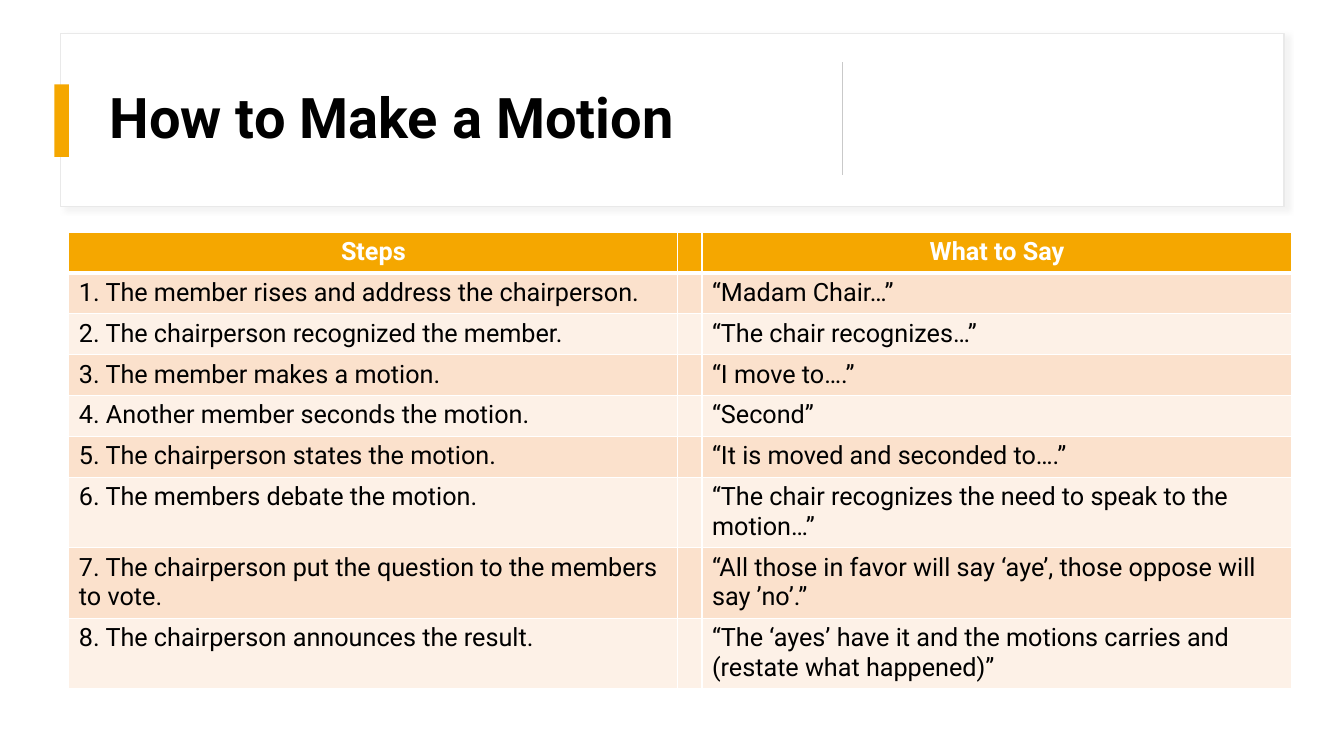
from lxml import etree
from pptx import Presentation
from pptx.dml.color import RGBColor
from pptx.enum.shapes import MSO_CONNECTOR, MSO_SHAPE
from pptx.enum.text import MSO_ANCHOR, PP_ALIGN
from pptx.oxml.ns import qn
from pptx.util import Pt

RECTANGLE = MSO_SHAPE.RECTANGLE
STRAIGHT = MSO_CONNECTOR.STRAIGHT
MIDDLE = MSO_ANCHOR.MIDDLE
CENTER, LEFT = PP_ALIGN.CENTER, PP_ALIGN.LEFT

# Content
TITLE = "How to Make a Motion"
HEADINGS = ("Steps", "What to Say")
STEPS = [
    ("1. The member rises and address the chairperson.", "“Madam Chair…”"),
    ("2. The chairperson recognized the member.", "“The chair recognizes…”"),
    ("3. The member makes a motion.", "“I move to….”"),
    ("4. Another member seconds the motion.", "“Second”"),
    ("5. The chairperson states the motion.", "“It is moved and seconded to….”"),
    ("6. The members debate the motion.",
     "“The chair recognizes the need to speak to the motion…”"),
    ("7. The chairperson put the question to the members to vote.",
     "“All those in favor will say ‘aye’, those oppose will say ’no’.”"),
    ("8. The chairperson announces the result.",
     "“The ‘ayes’ have it and the motions carries and (restate what happened)”"),
]

# Style and measures, in points
FONT = "Roboto"
ACCENT, WHITE, BLACK = "F5A700", "FFFFFF", "000000"
BANDS = ("FBE1CC", "FDF1E7")
FRAME_LINE, DIVIDER, SHADOW = "E9E9E9", "C9C9C9", "D9D9D9"
COLUMNS = (435, 17.2, 421.5)
ONE_LINE, TWO_LINES, FIRST_TWO_LINE_STEP = 29.2, 49.4, 6
TABLE_LEFT, TABLE_TOP = 49.2, 165.7


def color(value):
    return RGBColor.from_string(value)


def set_font(para, size, value, bold):
    para.font.name = FONT
    para.font.size = Pt(size)
    para.font.bold = bold
    para.font.color.rgb = color(value)


def add_rectangle(left, top, width, height, fill):
    shape = page.shapes.add_shape(RECTANGLE, Pt(left), Pt(top), Pt(width), Pt(height))
    shape.shadow.inherit = False
    shape.fill.solid()
    shape.fill.fore_color.rgb = color(fill)
    shape.line.fill.background()
    return shape


def add_color(parent, value):
    return etree.SubElement(parent, qn("a:srgbClr"), val=value)


def add_border(cell, side, width):
    line = etree.SubElement(cell._tc.get_or_add_tcPr(), qn(f"a:{side}"), w=str(Pt(width)))
    add_color(etree.SubElement(line, qn("a:solidFill")), WHITE)


def fill_cell(cell, text, fill, is_header):
    for side in ("lnL", "lnR", "lnT", "lnB"):
        add_border(cell, side, 3 if is_header and side == "lnB" else 1)
    cell.fill.solid()
    cell.fill.fore_color.rgb = color(fill)
    para = cell.text_frame.paragraphs[0]
    if text:
        para.text = text
    para.alignment = CENTER if is_header else LEFT
    set_font(para, 18, WHITE if is_header else BLACK, is_header)


deck = Presentation()
deck.slide_width, deck.slide_height = Pt(960), Pt(540)
page = deck.slides.add_slide(deck.slide_layouts[6])

# Title frame with a soft shadow
frame = add_rectangle(43.2, 23.8, 874, 123.8, WHITE)
frame.line.color.rgb = color(FRAME_LINE)
frame.line.width = Pt(1)
effects = frame._element.spPr.find(qn("a:effectLst"))
shadow = etree.SubElement(effects, qn("a:outerShdw"), blurRad=str(Pt(4)),
                          dist=str(Pt(3)), dir="2700000", algn="tl", rotWithShape="0")
etree.SubElement(add_color(shadow, SHADOW), qn("a:alpha"), val="30000")

# Title
box = page.shapes.add_textbox(Pt(71.3), Pt(31.7), Pt(506), Pt(108))
box.text_frame.word_wrap = True
box.text_frame.vertical_anchor = MIDDLE
heading = box.text_frame.paragraphs[0]
heading.text = TITLE
heading.line_spacing = 0.9
set_font(heading, 40, BLACK, True)

# Accent bar and divider
add_rectangle(38.9, 60.3, 10.4, 51.8, ACCENT)
divider = page.shapes.add_connector(STRAIGHT, Pt(601.9), Pt(44.6), Pt(601.9), Pt(125.2))
divider.line.color.rgb = color(DIVIDER)
divider.line.width = Pt(0.75)
etree.SubElement(divider._element.spPr, qn("a:effectLst"))

# Table of steps, with a narrow empty column between the two texts
rows = [HEADINGS] + STEPS
heights = [ONE_LINE if i < FIRST_TWO_LINE_STEP else TWO_LINES for i in range(len(rows))]
table = page.shapes.add_table(len(rows), len(COLUMNS), Pt(TABLE_LEFT), Pt(TABLE_TOP),
                              Pt(sum(COLUMNS)), Pt(sum(heights))).table
for column, width in zip(table.columns, COLUMNS):
    column.width = Pt(width)
for i, (step, words) in enumerate(rows):
    table.rows[i].height = Pt(heights[i])
    fill = ACCENT if i == 0 else BANDS[(i - 1) % 2]
    for j, text in enumerate((step, "", words)):
        fill_cell(table.cell(i, j), text, fill, i == 0)

deck.save("out.pptx")
